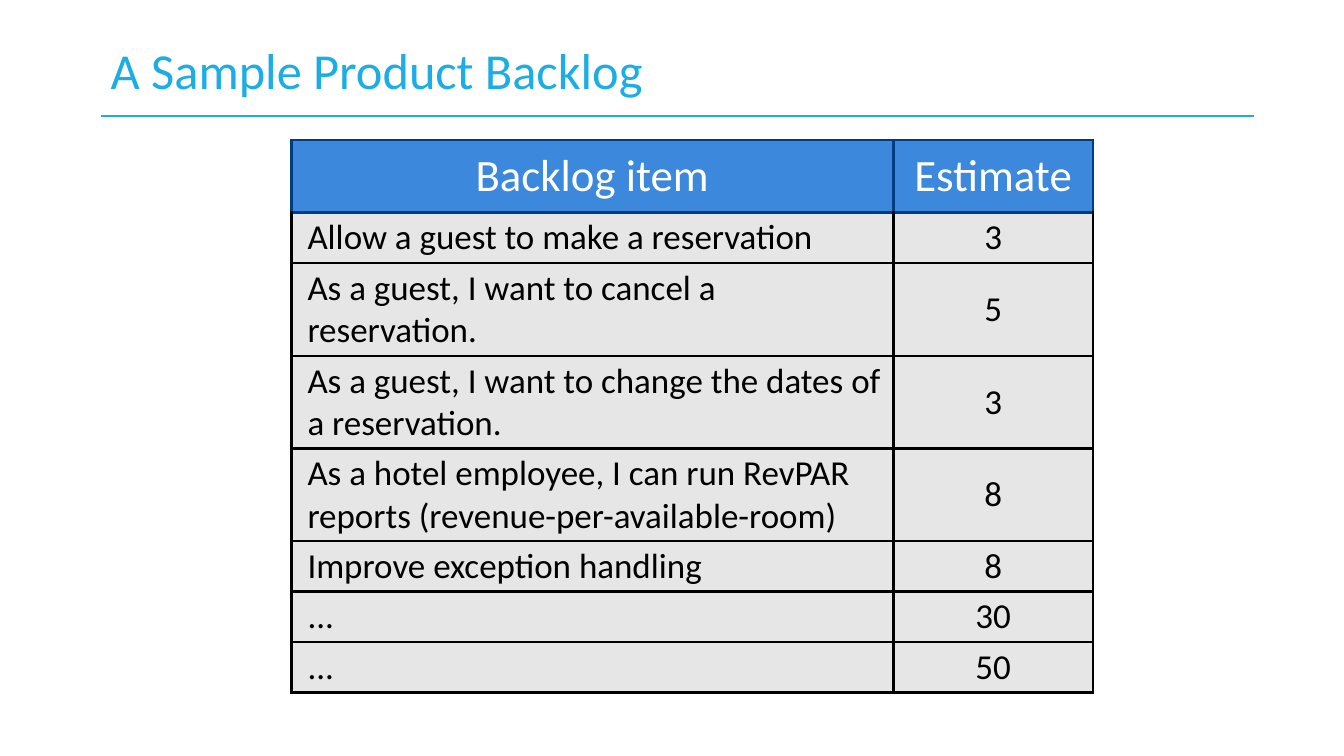
import pptx
import pptx.dml.color
import pptx.enum.shapes
import pptx.enum.text
import pptx.oxml
import pptx.oxml.ns
import pptx.util
from pptx.util import Inches

RGBColor = pptx.dml.color.RGBColor
ACCENT = RGBColor(0x1C, 0xAD, 0xE4)
HEADER_FILL = RGBColor(0x3C, 0x88, 0xDC)
HEADER_BORDER = RGBColor(0x00, 0x3C, 0x83)
BODY_FILL = RGBColor(0xE6, 0xE6, 0xE6)
BLACK = RGBColor(0x00, 0x00, 0x00)
WHITE = RGBColor(0xFF, 0xFF, 0xFF)

HEADINGS = ("Backlog item", "Estimate")
BACKLOG = [
    ("Allow a guest to make a reservation", "3"),
    ("As a guest, I want to cancel a reservation.", "5"),
    ("As a guest, I want to change the dates of a reservation.", "3"),
    ("As a hotel employee, I can run RevPAR reports (revenue-per-available-room)", "8"),
    ("Improve exception handling", "8"),
    ("...", "30"),
    ("...", "50"),
]
COLUMN_WIDTHS = (5.97, 1.98)
HEADER_HEIGHT = 0.72
ONE_LINE = 0.5
TWO_LINES = 0.92
ROW_HEIGHTS = [HEADER_HEIGHT] + [
    TWO_LINES if len(item) > 40 else ONE_LINE for item, estimate in BACKLOG
]


class SlideBuilder:
    font = "Calibri"
    cell_inset = Inches(0.04)
    item_indent = Inches(0.12)
    border_width = pptx.util.Pt(2)

    def __init__(self, slide):
        self.slide = slide

    def add_run(self, paragraph, text, size, color):
        run = paragraph.add_run()
        run.text = text
        run.font.name = self.font
        run.font.size = pptx.util.Pt(size)
        run.font.color.rgb = color

    def add_title(self, text, left, top, width, height):
        shape = self.slide.shapes.add_textbox(
            Inches(left), Inches(top), Inches(width), Inches(height))
        frame = shape.text_frame
        frame.word_wrap = True
        frame.vertical_anchor = pptx.enum.text.MSO_ANCHOR.MIDDLE
        self.add_run(frame.paragraphs[0], text, 36, ACCENT)

    def add_rule(self, left, right, top):
        connector = self.slide.shapes.add_connector(
            pptx.enum.shapes.MSO_CONNECTOR.STRAIGHT,
            Inches(left), Inches(top), Inches(right), Inches(top))
        connector.line.color.rgb = ACCENT
        connector.line.width = pptx.util.Pt(1)
        properties = connector._element.spPr
        properties.append(pptx.oxml.parse_xml(
            f'<a:effectLst {pptx.oxml.ns.nsdecls("a")}/>'))

    def add_border(self, cell, side, color):
        properties = cell._tc.get_or_add_tcPr()
        properties.append(pptx.oxml.parse_xml(
            f'<a:{side} {pptx.oxml.ns.nsdecls("a")} w="{self.border_width}">'
            f'<a:solidFill><a:srgbClr val="{color}"/></a:solidFill></a:{side}>'))

    def fill_cell(self, cell, text, is_header, is_item, border_colors):
        cell.margin_left = cell.margin_right = self.cell_inset
        cell.margin_top = cell.margin_bottom = self.cell_inset
        cell.vertical_anchor = pptx.enum.text.MSO_ANCHOR.MIDDLE
        paragraph = cell.text_frame.paragraphs[0]
        if is_item and not is_header:
            paragraph._p.get_or_add_pPr().set("marL", str(self.item_indent))
        else:
            paragraph.alignment = pptx.enum.text.PP_ALIGN.CENTER
        self.add_run(paragraph, text, 32 if is_header else 25,
                     WHITE if is_header else BLACK)
        for side, color in border_colors.items():
            self.add_border(cell, side, color)
        cell.fill.solid()
        cell.fill.fore_color.rgb = HEADER_FILL if is_header else BODY_FILL

    def add_backlog_table(self, left, top):
        rows = [HEADINGS] + BACKLOG
        table = self.slide.shapes.add_table(
            len(rows), len(HEADINGS), Inches(left), Inches(top),
            Inches(sum(COLUMN_WIDTHS)), Inches(sum(ROW_HEIGHTS))).table
        table.horz_banding = False
        for column, width in zip(table.columns, COLUMN_WIDTHS):
            column.width = Inches(width)
        for row, height in zip(table.rows, ROW_HEIGHTS):
            row.height = Inches(height)
        for row_index, values in enumerate(rows):
            is_header = row_index == 0
            border = HEADER_BORDER if is_header else BLACK
            border_colors = dict.fromkeys(("lnL", "lnR", "lnT", "lnB"), border)
            if row_index == 1:
                border_colors["lnT"] = HEADER_BORDER
            for column_index, text in enumerate(values):
                self.fill_cell(table.cell(row_index, column_index), text,
                               is_header, column_index == 0, border_colors)


def main():
    presentation = pptx.Presentation()
    presentation.slide_width = Inches(13.33)
    presentation.slide_height = Inches(7.5)
    slide = presentation.slides.add_slide(presentation.slide_layouts[6])
    builder = SlideBuilder(slide)
    builder.add_rule(1, 12.44, 1.15)
    builder.add_title("A Sample Product Backlog", 1, 0.3, 10.17, 0.77)
    builder.add_backlog_table(2.89, 1.39)
    presentation.save("out.pptx")


if __name__ == "__main__":
    main()
